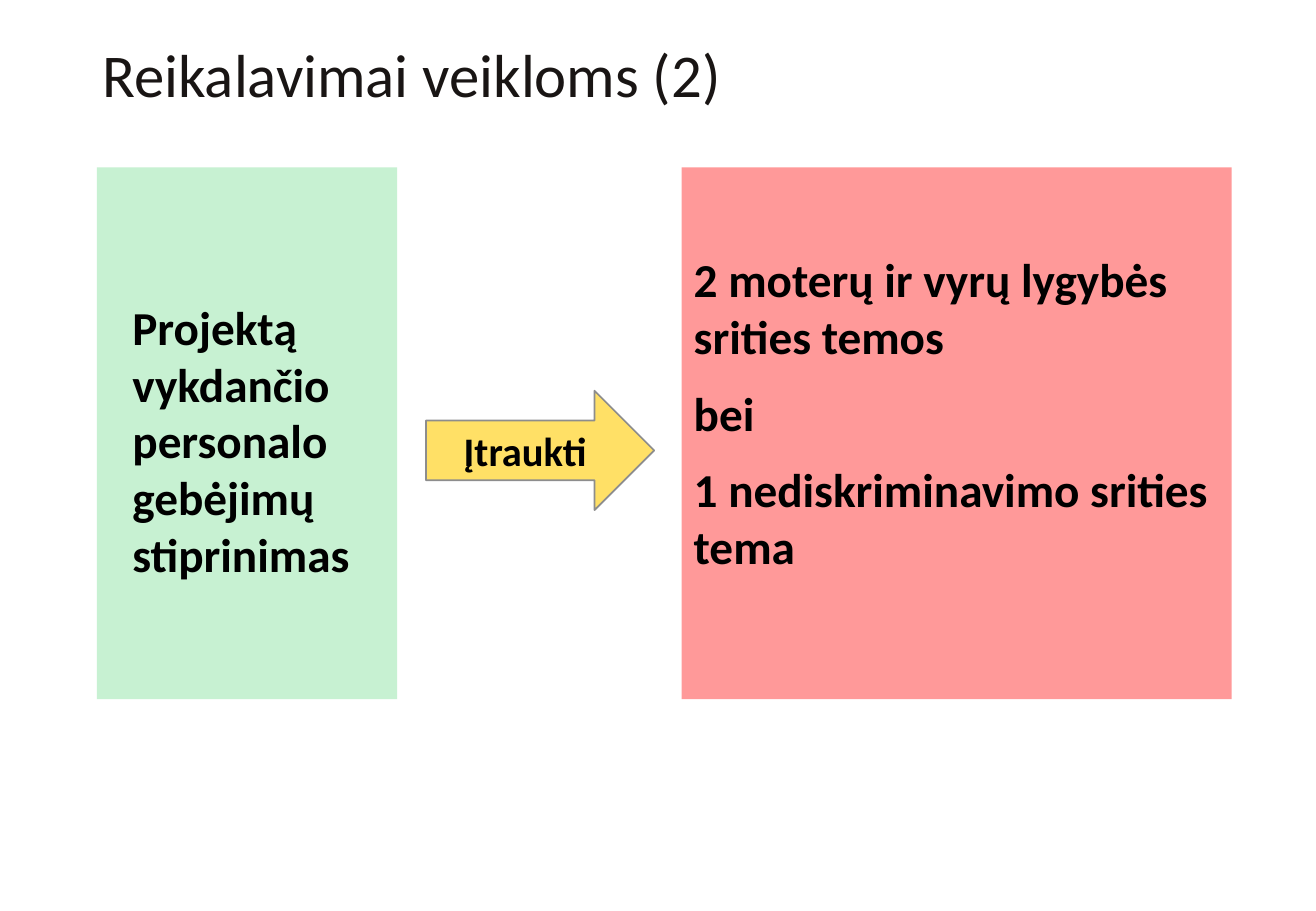
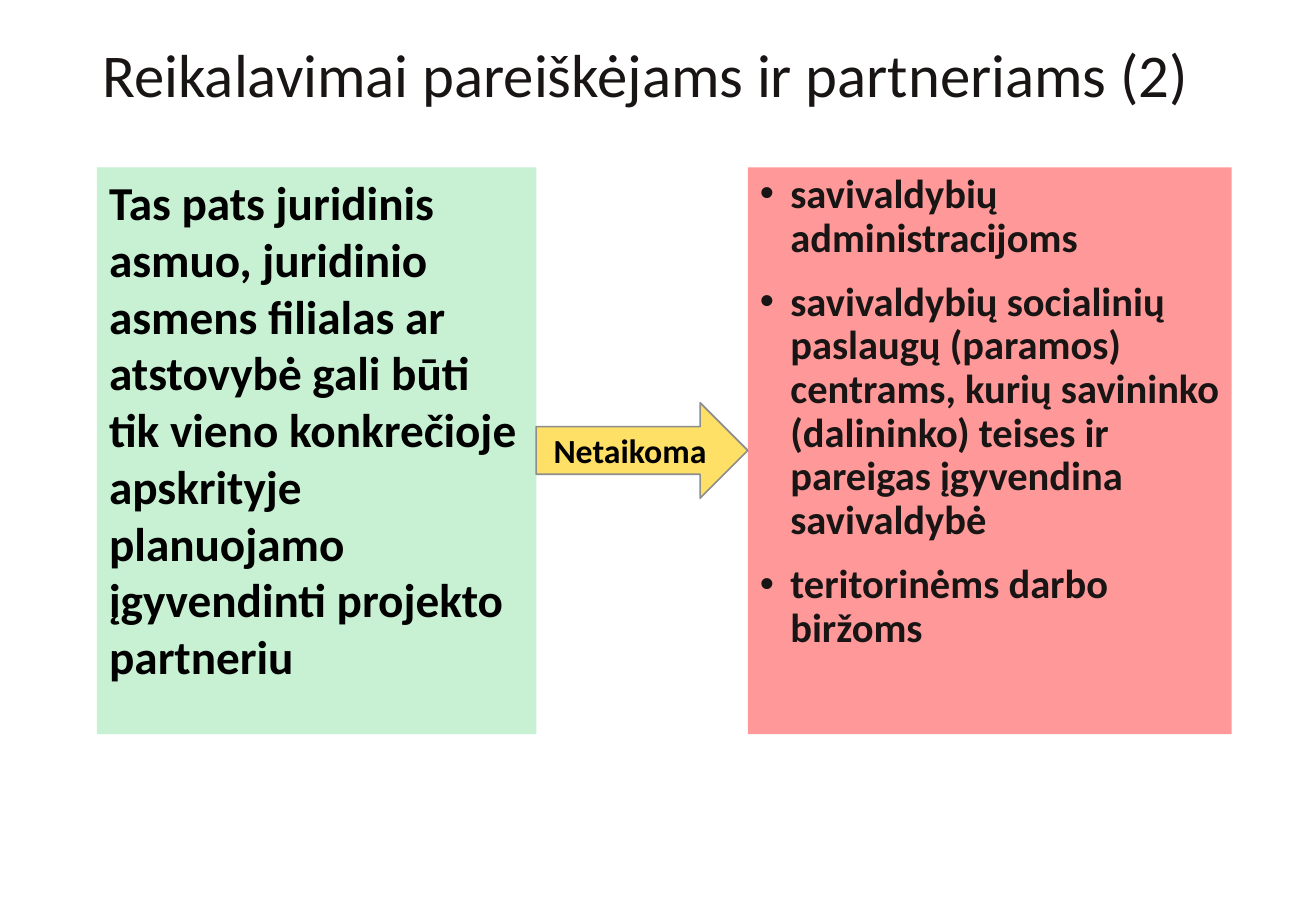
from lxml import etree
from pptx import Presentation
from pptx.dml.color import RGBColor
from pptx.enum import shapes, text
from pptx.oxml.ns import qn
from pptx.util import Pt

INK = RGBColor(0x19, 0x15, 0x14)
BLACK = RGBColor(0, 0, 0)
GREEN = RGBColor(0xC7, 0xF1, 0xD2)
RED = RGBColor(0xFF, 0x99, 0x99)
YELLOW = RGBColor(0xFF, 0xE0, 0x66)
GREY = RGBColor(0x8D, 0x8D, 0x8D)
FONT = "Calibri"
PANEL_LEFT, PANEL_RIGHT, PANEL_TOP = 57.5, 730, 99.25
ARROW_MIDDLE = 267


def place(shape, left, top, width, height):
    shape.left, shape.top = Pt(left), Pt(top)
    shape.width, shape.height = Pt(width), Pt(height)


def write(shape, lines, size=28, color=BLACK, bold=True, align=text.PP_ALIGN.LEFT,
          anchor=text.MSO_ANCHOR.TOP, inset=(7.2, 3.6), gap=0, spacing=1.0, bullet=None):
    """Fill a shape with one paragraph per line; inset is left and top."""
    frame = shape.text_frame
    frame.word_wrap = True
    frame.auto_size = text.MSO_AUTO_SIZE.NONE
    frame.vertical_anchor = anchor
    frame.margin_left, frame.margin_top = Pt(inset[0]), Pt(inset[1])
    frame.margin_right, frame.margin_bottom = Pt(7.2), Pt(3.6)
    for number, line in enumerate(lines):
        para = frame.add_paragraph() if number else frame.paragraphs[0]
        props = para._p.get_or_add_pPr()
        hang = Pt(18) if bullet else 0
        props.set("marL", str(hang))
        props.set("indent", str(-hang))
        if bullet:
            etree.SubElement(props, qn("a:buFont")).set("typeface", "Arial")
            etree.SubElement(props, qn("a:buChar")).set("char", bullet)
        else:
            etree.SubElement(props, qn("a:buNone"))
        para.alignment = align
        para.line_spacing = spacing
        para.space_before = Pt(gap if number else 0)
        para.space_after = Pt(0)
        span = para.add_run()
        span.text = line
        span.font.name, span.font.size = FONT, Pt(size)
        span.font.bold, span.font.color.rgb = bold, color


pages = [
    {
        "title": "Reikalavimai veikloms (2)",
        "height": 315.25, "left_width": 178, "right_width": 326,
        "left": ["Projektą vykdančio personalo gebėjimų stiprinimas"],
        "left_format": {"inset": (21, 77.5)},
        "right": ["2 moterų ir vyrų lygybės srities temos", "bei",
                  "1 nediskriminavimo srities tema"],
        "right_format": {"inset": (7.2, 49), "gap": 12},
        "arrow": "Įtraukti", "arrow_size": 24, "arrow_box": (252.5, 135.25, 70.75),
    },
    {
        "title": "Reikalavimai pareiškėjams ir partneriams (2)",
        "height": 336, "left_width": 260.5, "right_width": 286.75,
        "left": ["Tas pats juridinis asmuo, juridinio asmens filialas ar atstovybė "
                 "gali būti tik vieno konkrečioje apskrityje planuojamo "
                 "įgyvendinti projekto partneriu"],
        "left_format": {},
        "right": ["savivaldybių administracijoms",
                  "savivaldybių socialinių paslaugų (paramos) centrams, kurių savininko "
                  "(dalininko) teises ir pareigas įgyvendina savivaldybė",
                  "teritorinėms darbo biržoms"],
        "right_format": {"size": 24, "color": INK, "gap": 12, "spacing": 0.9, "bullet": "•"},
        "arrow": "Netaikoma", "arrow_size": 20, "arrow_box": (317.75, 125.5, 56.5),
    },
]

deck = Presentation()
deck.slide_width, deck.slide_height = Pt(780), Pt(540)
two_content = deck.slide_layouts[3]

for page in pages:
    slide = deck.slides.add_slide(two_content)
    title, left_panel, right_panel = slide.placeholders

    place(title, 53.5, 25, 672.5, 42.5)
    write(title, [page["title"]], size=36, color=INK, bold=False,
          anchor=text.MSO_ANCHOR.MIDDLE, spacing=0.9)

    place(left_panel, PANEL_LEFT, PANEL_TOP, page["left_width"], page["height"])
    place(right_panel, PANEL_RIGHT - page["right_width"], PANEL_TOP,
          page["right_width"], page["height"])
    for panel, side, fill in ((left_panel, "left", GREEN), (right_panel, "right", RED)):
        panel.fill.solid()
        panel.fill.fore_color.rgb = fill
        write(panel, page[side], **page[side + "_format"])

    left, width, height = page["arrow_box"]
    arrow = slide.shapes.add_shape(shapes.MSO_SHAPE.RIGHT_ARROW, 0, 0, 0, 0)
    place(arrow, left, ARROW_MIDDLE - height / 2, width, height)
    arrow.shadow.inherit = False
    arrow.fill.solid()
    arrow.fill.fore_color.rgb = YELLOW
    arrow.line.color.rgb = GREY
    arrow.line.width = Pt(1)
    write(arrow, [page["arrow"]], size=page["arrow_size"],
          align=text.PP_ALIGN.CENTER, anchor=text.MSO_ANCHOR.MIDDLE)

deck.save("out.pptx")
